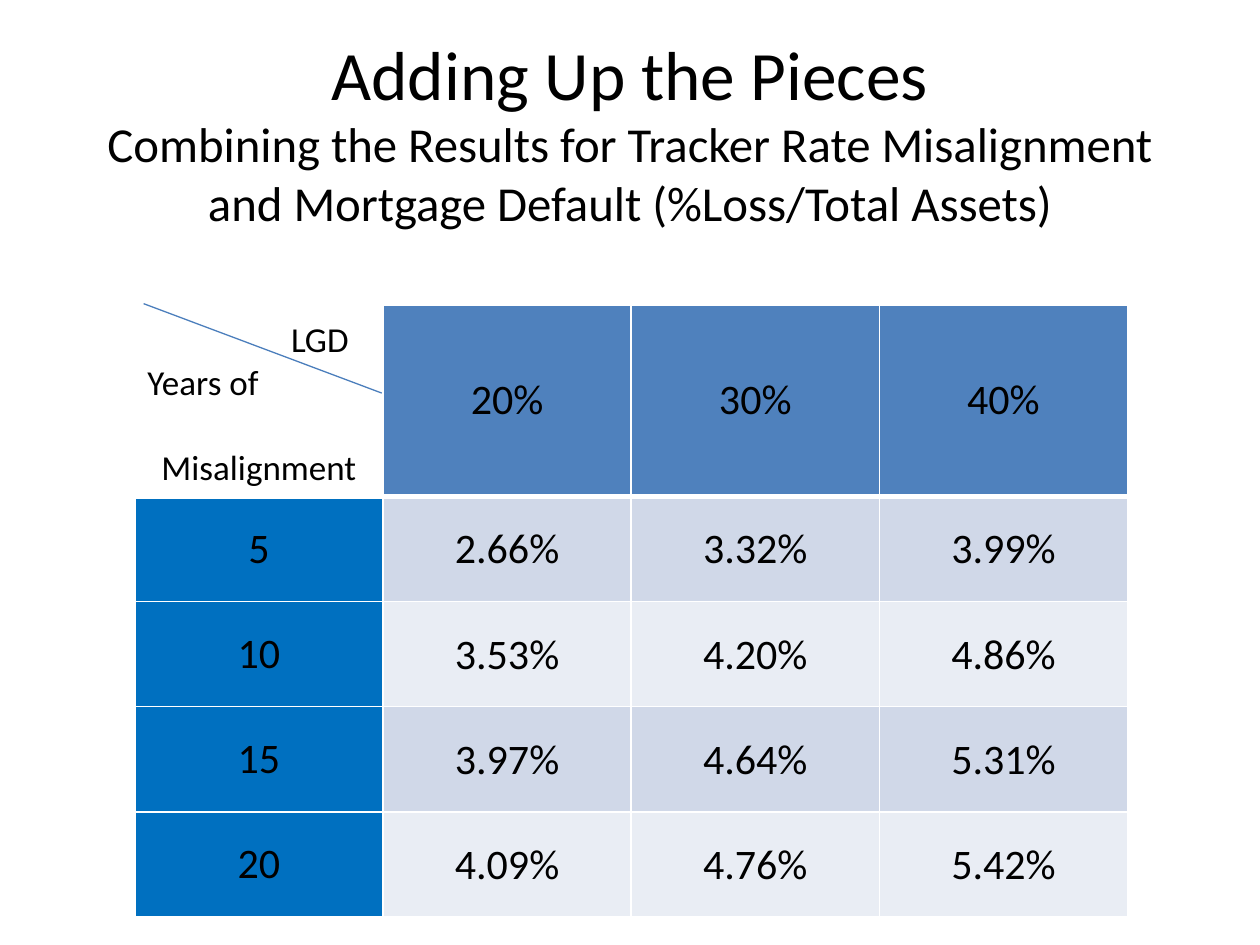
from pptx import Presentation
from pptx.dml.color import RGBColor
from pptx.enum.shapes import MSO_CONNECTOR
from pptx.enum.text import MSO_ANCHOR, MSO_AUTO_SIZE, PP_ALIGN
from pptx.oxml.ns import qn
from pptx.util import Inches, Pt
from lxml import etree

LINE = MSO_CONNECTOR.STRAIGHT
MID, LOW = MSO_ANCHOR.MIDDLE, MSO_ANCHOR.BOTTOM
LEFT, MIDST = PP_ALIGN.LEFT, PP_ALIGN.CENTER
NOFIT = MSO_AUTO_SIZE.NONE

THEME = {
    "font": "Calibri", "ink": "000000", "white": "FFFFFF",
    "head": "4F81BD", "side": "0070C0", "bands": ("D0D8E8", "E9EDF4"),
    "line": "4B7EBC", "title": 39.6, "sub": 27.9, "cell": 24, "corner": 20,
}
HEAD = ["20%", "30%", "40%"]
ROWS = [
    ["5", "2.66%", "3.32%", "3.99%"],
    ["10", "3.53%", "4.20%", "4.86%"],
    ["15", "3.97%", "4.64%", "5.31%"],
    ["20", "4.09%", "4.76%", "5.42%"],
]
# Grid in inches
X, Y, COL, TOP, ROW = 1.07, 2.42, 1.97, 1.52, 0.835


def style(par, size, align=MIDST):
    par.alignment = align
    for run in par.runs:
        run.font.name = THEME["font"]
        run.font.size = Pt(size)
        run.font.color.rgb = RGBColor.from_string(THEME["ink"])


def paint(cell, fill, base):
    """Draw white cell borders, then fill the cell."""
    props = cell._tc.get_or_add_tcPr()
    for side, wide in (("L", 1), ("R", 1), ("T", 1), ("B", base)):
        edge = etree.SubElement(props, qn("a:ln" + side), w=str(Pt(wide)))
        solid = etree.SubElement(edge, qn("a:solidFill"))
        etree.SubElement(solid, qn("a:srgbClr"), val=THEME["white"])
    cell.fill.solid()
    cell.fill.fore_color.rgb = RGBColor.from_string(fill)
    cell.vertical_anchor = MID


deck = Presentation()
deck.slide_width, deck.slide_height = Inches(10), Inches(7.5)
slide = deck.slides.add_slide(deck.slide_layouts[5])

# Title with a smaller second part
title = slide.shapes.title
title.left, title.top = Inches(0.5), Inches(0.3)
title.width, title.height = Inches(9), Inches(1.48)
frame = title.text_frame
frame.text = ("Adding Up the Pieces\vCombining the Results for Tracker Rate "
              "Misalignment and Mortgage Default (%Loss/Total Assets)")
frame.auto_size = NOFIT
frame.vertical_anchor = MID
head = frame.paragraphs[0]
style(head, THEME["sub"])
head.runs[0].font.size = Pt(THEME["title"])

# Loss table
grid = [[""] + HEAD] + ROWS
count = len(grid[0])
table = slide.shapes.add_table(
    len(grid), count, Inches(X), Inches(Y),
    Inches(COL * count), Inches(TOP + ROW * len(ROWS))).table
for col in table.columns:
    col.width = Inches(COL)
for r, row in enumerate(grid):
    table.rows[r].height = Inches(ROW if r else TOP)
    for c, text in enumerate(row):
        cell = table.cell(r, c)
        if r == 0:
            fill = THEME["head"] if c else THEME["white"]
        else:
            fill = THEME["bands"][(r - 1) % 2] if c else THEME["side"]
        paint(cell, fill, 1 if r else 3)
        if r and c:
            cell.margin_left = cell.margin_right = cell.margin_top = Inches(0.01)
            cell.margin_bottom = 0
        if text:
            cell.text_frame.text = text
            style(cell.text_frame.paragraphs[0], THEME["cell"])

# Corner cell names both axes
corner = table.cell(0, 0)
corner.vertical_anchor = LOW
corner.text_frame.text = "LGD\nYears of\nMisalignment"
loss, years, miss = corner.text_frame.paragraphs
style(loss, THEME["corner"], LEFT)
style(years, THEME["corner"], LEFT)
style(miss, THEME["corner"])
loss._p.get_or_add_pPr().set("marL", str(Inches(1.14)))
miss.space_before = Pt(24.4)

# Slanted divider in the corner cell
slant = slide.shapes.add_connector(
    LINE, Inches(1.14), Inches(2.41), Inches(3.03), Inches(3.12))
slant.line.color.rgb = RGBColor.from_string(THEME["line"])
slant.line.width = Pt(0.75)
etree.SubElement(slant._element.spPr, qn("a:effectLst"))

deck.save("out.pptx")
